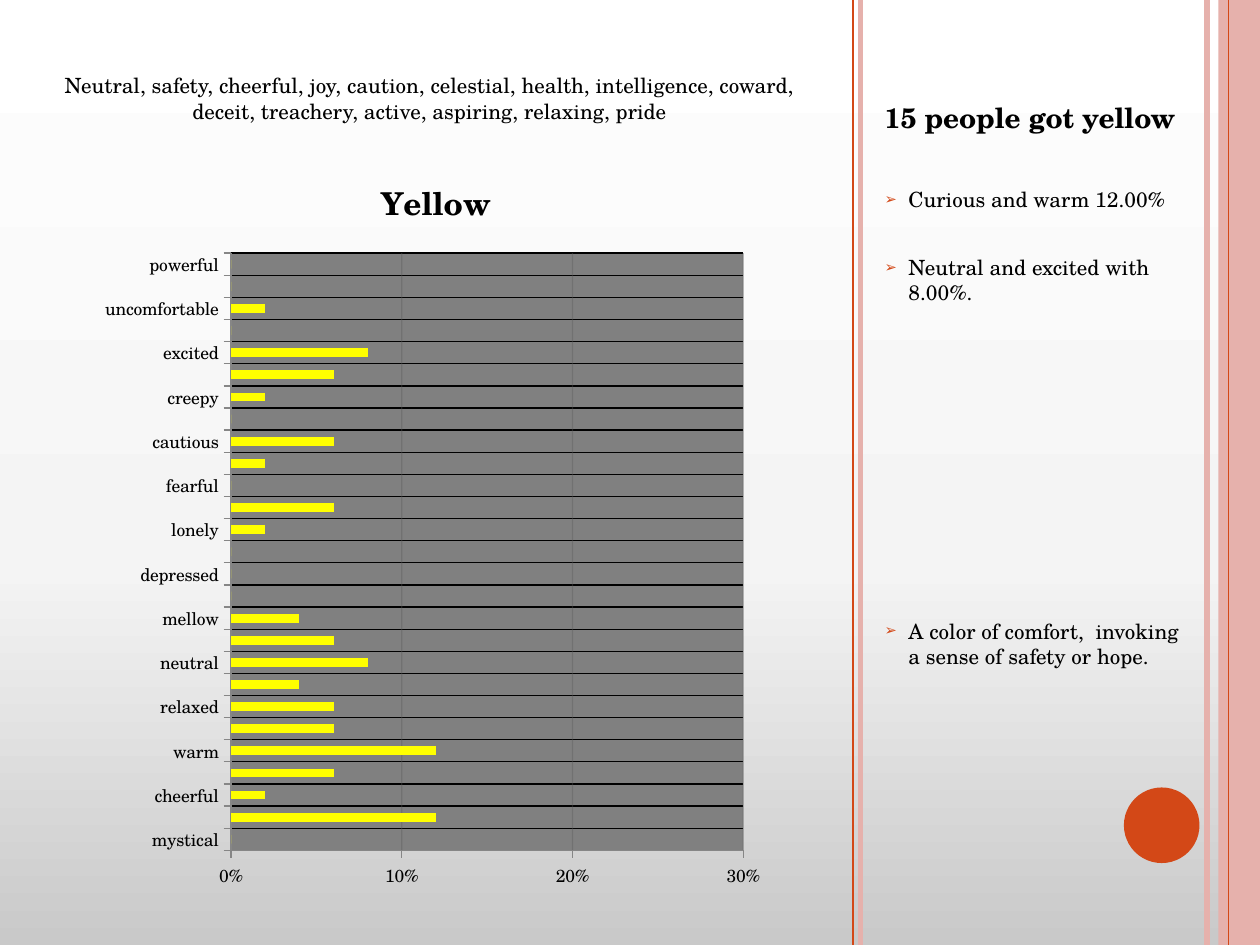
from copy import deepcopy

from lxml.etree import SubElement as Sub
from pptx import Presentation
from pptx.chart.data import CategoryChartData as ChartData
from pptx.dml.color import RGBColor as Rgb
from pptx.enum.chart import XL_CHART_TYPE as Kind, XL_TICK_MARK as Tick
from pptx.enum.shapes import MSO_CONNECTOR as Link, MSO_SHAPE as Form
from pptx.enum.text import MSO_ANCHOR as Anchor, MSO_AUTO_SIZE as Fit, PP_ALIGN as Align
from pptx.oxml import parse_xml
from pptx.oxml.ns import nsdecls, qn
from pptx.util import Inches, Pt

FONT = "TeX Gyre Schola"
HEX = {"ink": "000000", "rust": "D34817", "pink": "E6B1AC", "plot": "808080",
       "bar": "FFFF00", "grid": "595959", "axis": "868686"}
SHADES = [(0, "C9C9C9"), (0.4, "F4F4F4"), (1, "FFFFFF")]
RULES = [(9.58, "pink", 3), (9.75, "rust", 0.75), (6.83, "pink", 3), (6.77, "rust", 1)]
WORDS = "Neutral, safety, cheerful, joy, caution, celestial, health, intelligence, coward, deceit, treachery, active, aspiring, relaxing, pride"
NOTES = [("Curious and warm 12.00%", 0), ("Neutral and excited with 8.00%.", 24.5),
         ("A color of comfort,  invoking a sense of safety or hope.", 179)]
MOODS = [
    ("mystical", 0), ("curious", 0.12), ("cheerful", 0.02), ("hopefull", 0.06),
    ("warm", 0.12), ("soothing", 0.06), ("relaxed", 0.06), ("secure", 0.04),
    ("neutral", 0.08), ("comfortable", 0.06), ("mellow", 0.04), ("melancholy", 0),
    ("depressed", 0), ("cold", 0), ("lonely", 0.02), ("desperate", 0.06),
    ("fearful", 0), ("helpless", 0.02), ("cautious", 0.06), ("scared", 0),
    ("creepy", 0.02), ("anxious", 0.06), ("excited", 0.08), ("urgent", 0),
    ("uncomfortable", 0.02), ("angry", 0), ("powerful", 0),
]
PLOT = {"x": 0.2, "y": 0.14, "w": 0.75, "h": 0.79}


def color(name):
    return Rgb.from_string(HEX[name])


def style(font, size, bold=False):
    font.name, font.size, font.bold = FONT, Pt(size), bold
    font.color.rgb = color("ink")


def stroke(line, name, width):
    line.color.rgb = color(name)
    line.width = Pt(width)


def place(shape, box):
    shape.left, shape.top, shape.width, shape.height = map(Inches, box)


def solid(slide, form, box, name):
    shape = slide.shapes.add_shape(form, *map(Inches, box))
    shape.shadow.inherit = False
    shape.fill.solid()
    shape.fill.fore_color.rgb = color(name)
    shape.line.fill.background()


def add_back(slide):
    fill = slide.background.fill
    fill.gradient()
    fill.gradient_angle = 90
    stops = slide.element.find(".//" + qn("a:gsLst"))
    stops.append(deepcopy(stops[-1]))
    for stop, (pos, shade) in zip(fill.gradient_stops, SHADES):
        stop.position = pos
        stop.color.rgb = Rgb.from_string(shade)


def add_trim(slide, height):
    solid(slide, Form.RECTANGLE, (9.67, 0, 0.33, height), "pink")
    solid(slide, Form.OVAL, (8.92, 6.25, 0.6, 0.6), "rust")
    for x, name, width in RULES:
        rule = slide.shapes.add_connector(
            Link.STRAIGHT, Inches(x), 0, Inches(x), Inches(height))
        stroke(rule.line, name, width)
        Sub(rule.element.spPr, qn("a:effectLst"))


def add_bullet(para):
    props = para._p.get_or_add_pPr()
    props.set("marL", str(Inches(0.19)))
    props.set("indent", str(-Inches(0.19)))
    tint = Sub(Sub(props, qn("a:buClr")), qn("a:srgbClr"))
    tint.set("val", HEX["rust"])
    Sub(props, qn("a:buSzPct")).set("val", "70000")
    Sub(props, qn("a:buChar")).set("char", "➢")


def add_side(slide, box):
    left, top, width, height = box
    head, body = slide.shapes.title, slide.placeholders[1]
    place(head, (left, top, width, 0.45))
    place(body, (left, top + 0.68, width, height - 0.68))
    for shape in (head, body):
        shape.text_frame.auto_size = Fit.NONE
        shape.text_frame.vertical_anchor = Anchor.TOP
    head.text_frame.text = "15 people got yellow"
    title = head.text_frame.paragraphs[0]
    title.alignment = Align.LEFT
    style(title.runs[0].font, 16, True)
    body.text_frame.text = "\n".join(text for text, gap in NOTES)
    for para, (text, gap) in zip(body.text_frame.paragraphs, NOTES):
        para.space_before, para.space_after = Pt(gap), Pt(0)
        add_bullet(para)
        style(para.runs[0].font, 12)


def add_words(slide, box):
    frame = slide.shapes.add_textbox(*map(Inches, box)).text_frame
    frame.word_wrap = True
    frame.text = WORDS
    para = frame.paragraphs[0]
    para.alignment = Align.CENTER
    style(para.runs[0].font, 12)


def set_plot(chart):
    plot = chart.element.find(".//" + qn("c:plotArea"))
    old = plot.find(qn("c:layout"))
    if old is not None:
        plot.remove(old)
    layout = parse_xml(f"<c:layout {nsdecls('c')}/>")
    manual = Sub(layout, qn("c:manualLayout"))
    Sub(manual, qn("c:layoutTarget")).set("val", "inner")
    for key in "xy":
        Sub(manual, qn(f"c:{key}Mode")).set("val", "edge")
    for key, part in PLOT.items():
        Sub(manual, qn(f"c:{key}")).set("val", str(part))
    plot.insert(0, layout)
    plot.append(parse_xml(
        f'<c:spPr {nsdecls("c", "a")}><a:solidFill>'
        f'<a:srgbClr val="{HEX["plot"]}"/></a:solidFill></c:spPr>'))


def add_bars(slide, box):
    data = ChartData(number_format="0%")
    data.categories = [mood for mood, share in MOODS]
    data.add_series("Yellow", [share for mood, share in MOODS])
    chart = slide.shapes.add_chart(
        Kind.BAR_CLUSTERED, *map(Inches, box), data).chart
    style(chart.font, 10)
    chart.has_legend = False
    chart.has_title = True
    chart.chart_title.text_frame.text = "Yellow"
    style(chart.chart_title.text_frame.paragraphs[0].runs[0].font, 18, True)
    bars = chart.plots[0]
    bars.gap_width, bars.vary_by_categories = 150, False
    fill = bars.series[0].format.fill
    fill.solid()
    fill.fore_color.rgb = color("bar")
    cats, vals = chart.category_axis, chart.value_axis
    for axis, name in ((cats, "ink"), (vals, "grid")):
        axis.major_tick_mark, axis.minor_tick_mark = Tick.OUTSIDE, Tick.NONE
        axis.has_major_gridlines = True
        stroke(axis.major_gridlines.format.line, name, 0.75)
        stroke(axis.format.line, "axis", 0.75)
    vals.minimum_scale, vals.maximum_scale, vals.major_unit = 0, 0.3, 0.1
    vals.tick_labels.number_format = "0%"
    vals.tick_labels.number_format_is_linked = False
    tint = chart.element.find(
        f".//{qn('c:valAx')}/{qn('c:majorGridlines')}//{qn('a:srgbClr')}")
    Sub(tint, qn("a:alpha")).set("val", "36000")
    set_plot(chart)


def main():
    deck = Presentation()
    deck.slide_width, deck.slide_height = Inches(10), Inches(7.5)
    slide = deck.slides.add_slide(deck.slide_layouts[1])
    add_back(slide)
    add_trim(slide, 7.5)
    add_side(slide, (6.92, 0.75, 2.58, 5.58))
    add_bars(slide, (0.75, 1.17, 5.42, 6))
    add_words(slide, (0.17, 0.53, 6.48, 0.71))
    deck.save("out.pptx")


if __name__ == "__main__":
    main()
